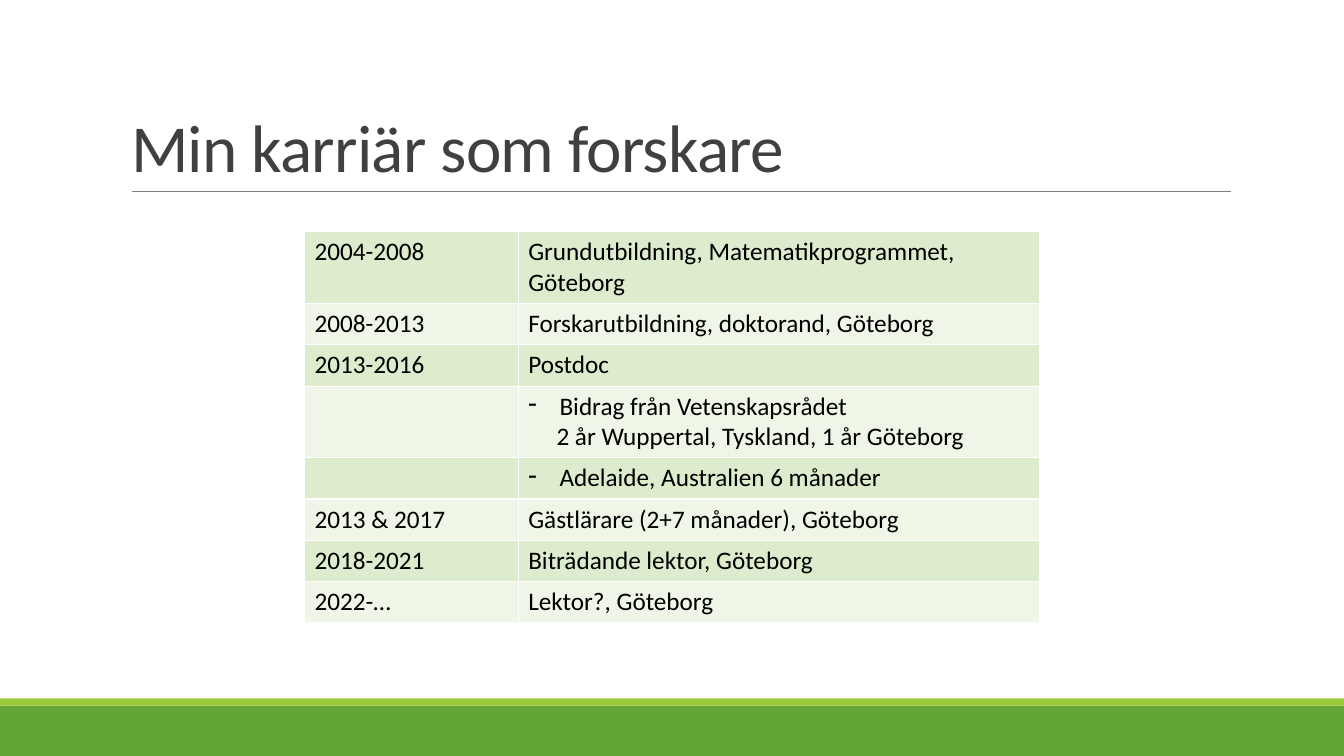
from pptx import Presentation
from pptx.dml.color import RGBColor
from pptx.enum.shapes import MSO_CONNECTOR, MSO_SHAPE
from pptx.enum.text import MSO_ANCHOR, MSO_AUTO_SIZE, PP_ALIGN
from pptx.oxml.ns import qn
from pptx.util import Inches, Pt
from lxml import etree

RECTANGLE = MSO_SHAPE.RECTANGLE
STRAIGHT = MSO_CONNECTOR.STRAIGHT
BOTTOM = MSO_ANCHOR.BOTTOM
NO_AUTOFIT = MSO_AUTO_SIZE.NONE
LEFT = PP_ALIGN.LEFT
TITLE_ONLY = 5

COLORS = {
    "green": "63A537",
    "lime": "99CB38",
    "rule": "808080",
    "title": "404040",
    "text": "000000",
    "border": "FFFFFF",
    "band_dark": "DEECCE",
    "band_light": "EFF6E8",
}

# Each entry: period, then lines of (text, left indent, bullet)
CAREER = [
    ("2004-2008", [("Grundutbildning, Matematikprogrammet, Göteborg", 0, None)]),
    ("2008-2013", [("Forskarutbildning, doktorand, Göteborg", 0, None)]),
    ("2013-2016", [("Postdoc", 0, None)]),
    ("", [("Bidrag från Vetenskapsrådet", 0.31, "-"),
          ("2 år Wuppertal, Tyskland, 1 år Göteborg", 0.28, None)]),
    ("", [("Adelaide, Australien 6 månader", 0.31, "-")]),
    ("2013 & 2017", [("Gästlärare (2+7 månader), Göteborg", 0, None)]),
    ("2018-2021", [("Biträdande lektor, Göteborg", 0, None)]),
    ("2022-…", [("Lektor?, Göteborg", 0, None)]),
]


def color(name):
    return RGBColor.from_string(COLORS[name])


class SlideBuilder:
    font = "Calibri"

    def __init__(self, page):
        self.page = page

    def add_span(self, para, text, size, color_name):
        span = para.add_run()
        span.text = text
        span.font.name = self.font
        span.font.size = Pt(size)
        span.font.color.rgb = color(color_name)
        return span

    def bar(self, top, height, color_name):
        box = self.page.shapes.add_shape(
            RECTANGLE, 0, Inches(top), Inches(13.33), Inches(height))
        box.shadow.inherit = False
        box.fill.solid()
        box.fill.fore_color.rgb = color(color_name)
        box.line.fill.background()

    def rule(self, left, right, top):
        line = self.page.shapes.add_connector(
            STRAIGHT, Inches(left), Inches(top), Inches(right), Inches(top))
        line.line.color.rgb = color("rule")
        line.line.width = Pt(0.5)
        etree.SubElement(line._element.spPr, qn("a:effectLst"))

    def title(self, text, left, top, width, height):
        box = self.page.shapes.title
        box.left, box.top = Inches(left), Inches(top)
        box.width, box.height = Inches(width), Inches(height)
        frame = box.text_frame
        frame.word_wrap = True
        frame.auto_size = NO_AUTOFIT
        frame.vertical_anchor = BOTTOM
        para = frame.paragraphs[0]
        para.alignment = LEFT
        para.line_spacing = 0.85
        span = self.add_span(para, text, 48, "title")
        span.font._element.set("spc", "-50")

    def cell(self, cell, lines, fill_name):
        for index, (text, indent, bullet) in enumerate(lines):
            frame = cell.text_frame
            para = frame.add_paragraph() if index else frame.paragraphs[0]
            if text:
                self.add_span(para, text, 18, "text")
            else:
                para.font.size = Pt(18)
            if indent:
                props = para._p.get_or_add_pPr()
                props.set("marL", str(Inches(indent)))
                props.set("indent", str(-Inches(indent) if bullet else 0))
                if bullet:
                    etree.SubElement(props, qn("a:buChar")).set("char", bullet)

        # Borders come before the fill in the cell properties
        cell_props = cell._tc.get_or_add_tcPr()
        for side in ("a:lnL", "a:lnR", "a:lnT", "a:lnB"):
            border = etree.SubElement(cell_props, qn(side), w=str(Pt(1)))
            paint = etree.SubElement(border, qn("a:solidFill"))
            etree.SubElement(paint, qn("a:srgbClr"), val=COLORS["border"])
        cell.fill.solid()
        cell.fill.fore_color.rgb = color(fill_name)

    def table(self, entries, left, top, widths, row_height):
        table = self.page.shapes.add_table(
            len(entries), len(widths), Inches(left), Inches(top),
            Inches(sum(widths)), Inches(row_height * len(entries))).table
        table.first_row = False
        table.horz_banding = False
        for column, width in zip(table.columns, widths):
            column.width = Inches(width)
        for index, (period, lines) in enumerate(entries):
            table.rows[index].height = Inches(row_height)
            band = "band_light" if index % 2 else "band_dark"
            self.cell(table.cell(index, 0), [(period, 0, None)], band)
            self.cell(table.cell(index, 1), lines, band)


def main():
    deck = Presentation()
    deck.slide_width, deck.slide_height = Inches(13.33), Inches(7.5)
    builder = SlideBuilder(deck.slides.add_slide(deck.slide_layouts[TITLE_ONLY]))

    # Footer bars and title rule
    builder.bar(7, 0.5, "green")
    builder.bar(6.93, 0.07, "lime")
    builder.rule(1.31, 12.21, 1.9)

    # Title and career table
    builder.title("Min karriär som forskare", 1.2, 0.31, 11, 1.59)
    builder.table(CAREER, 3.02, 2.3, [2.12, 5.17], 0.41)

    deck.save("out.pptx")


if __name__ == "__main__":
    main()
